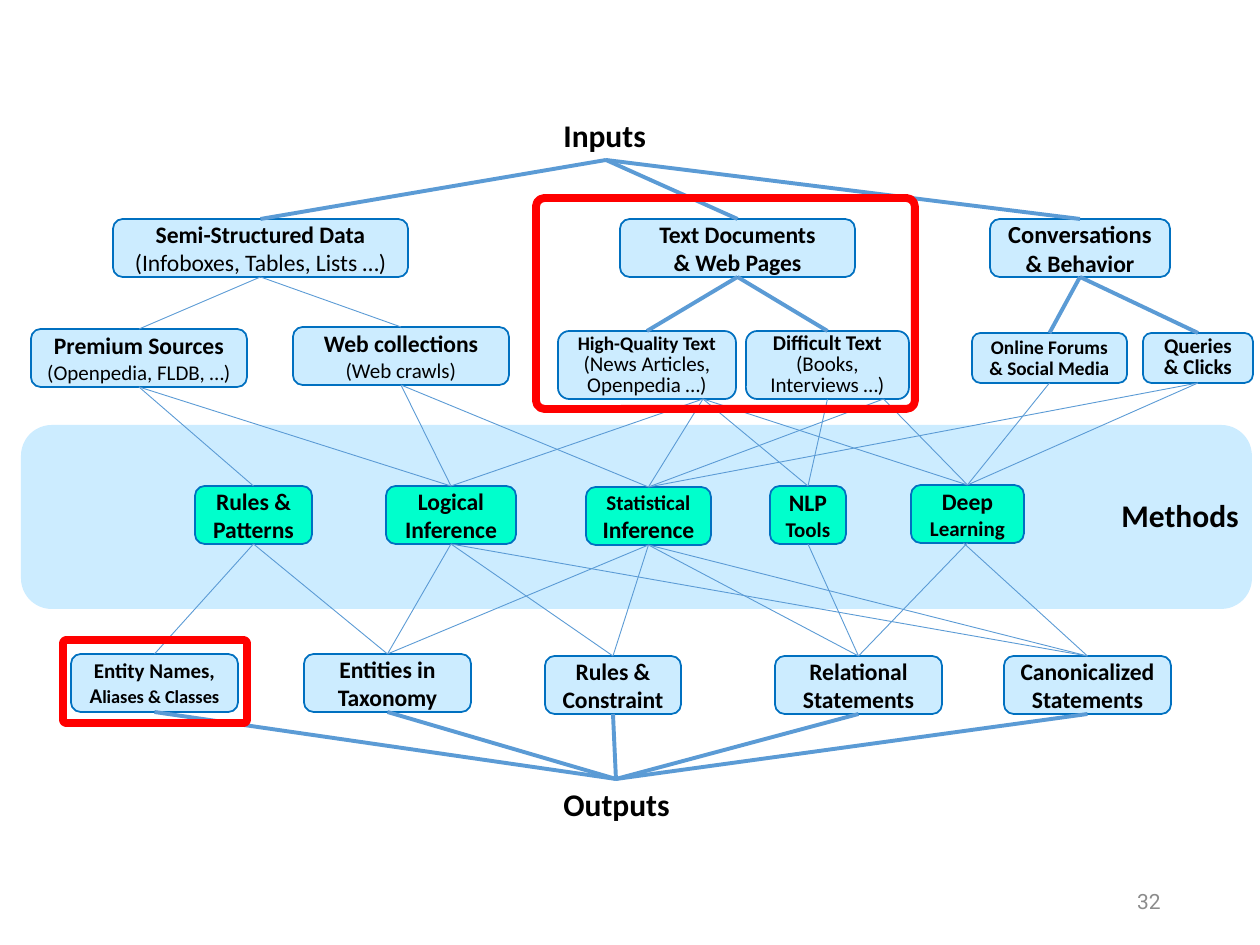
"""Build a slide that maps knowledge-harvesting inputs through methods to outputs."""
import pptx
import pptx.dml.color
import pptx.enum.shapes
import pptx.enum.text
import pptx.oxml.ns
import pptx.util
from lxml import etree

RGB = pptx.dml.color.RGBColor
SHAPE = pptx.enum.shapes.MSO_SHAPE
ALIGN = pptx.enum.text.PP_ALIGN
ANCHOR = pptx.enum.text.MSO_ANCHOR

PALE_BLUE = RGB(0xCC, 0xEC, 0xFF)
MINT = RGB(0x00, 0xFF, 0xCC)
OUTLINE = RGB(0x00, 0x70, 0xC0)
LINK_BLUE = RGB(0x5B, 0x9B, 0xD5)
RED = RGB(0xFF, 0x00, 0x00)
BLACK = RGB(0x00, 0x00, 0x00)
GRAY = RGB(0x8C, 0x8C, 0x8C)
THICK, THIN = 2.25, 0.5
PX_PER_INCH = 126

BAND = (21, 425, 1231, 184)
FRAMES = [(536, 198, 379, 211), (63, 640, 184, 83)]
LABELS = {
    "Inputs": (551, 110, 110, 50),
    "Outputs": (551, 779, 130, 50),
    "Methods": (1109, 490, 143, 50),
}
PAGE_NUMBER = ("32", (890, 876, 283, 50))

# Each tier: fill, box height, line spacing in points, then
# name: (left, top, width, paragraphs of (text, size, bold) runs).
TIERS = [
    (PALE_BLUE, 58, None, {
        "semi-structured": (113, 219, 295, [
            [("Semi-Structured Data", 13.5, True)],
            [("(Infoboxes, Tables, Lists …)", 13.5, False)]]),
        "documents": (620, 219, 235, [
            [("Text Documents", 13.5, True)], [("& Web Pages", 13.5, True)]]),
        "conversations": (990, 219, 180, [
            [("Conversations", 14, True)], [("& Behavior", 13.5, True)]]),
        "premium": (31, 329, 216, [
            [("Premium Sources", 13.5, True)],
            [("(Openpedia, FLDB, …)", 12, False)]]),
        "web": (293, 327, 216, [
            [("Web collections", 13.5, True)], [("(Web crawls)", 12, False)]]),
    }),
    (PALE_BLUE, 68, 12, {
        "quality": (558, 331, 178, [
            [("High-Quality Text", 11, True)],
            [("(News Articles, Openpedia …)", 12, False)]]),
        "difficult": (746, 331, 163, [
            [("Difficult Text", 12, True)],
            [("(Books,", 12, False)], [("Interviews …)", 12, False)]]),
    }),
    (PALE_BLUE, 50, 12, {
        "forums": (972, 333, 155, [
            [("Online Forums", 11, True)], [("& Social Media", 11, True)]]),
        "queries": (1143, 333, 110, [[("Queries & Clicks", 12, True)]]),
    }),
    (MINT, 58, None, {
        "rules": (195, 486, 117, [[("Rules & Patterns", 13.5, True)]]),
        "logical": (386, 486, 130, [
            [("Logical", 13.5, True)], [("Inference", 13.5, True)]]),
        "statistical": (586, 487, 125, [
            [("Statistical", 12, True)], [("Inference", 13.5, True)]]),
        "nlp": (770, 486, 76, [[("NLP", 13.5, True)], [("Tools", 12, True)]]),
        "deep": (911, 485, 113, [
            [("Deep", 13.5, True)], [("Learning", 12, True)]]),
    }),
    (PALE_BLUE, 58, None, {
        "names": (71, 654, 167, [
            [("Entity Names, A", 12, True), ("liases & Classes", 10.5, True)]]),
        "taxonomy": (304, 654, 167, [
            [("Entities in", 13.5, True)], [("Taxonomy", 13.5, True)]]),
        "constraint": (545, 656, 136, [
            [("Rules &", 13.5, True)], [("Constraint", 13.5, True)]]),
        "relational": (775, 656, 167, [
            [("Relational", 13.5, True)], [("Statements", 13.5, True)]]),
        "canonical": (1004, 656, 167, [
            [("Canonicalized", 13.5, True)], [("Statements", 13.5, True)]]),
    }),
]

LINKS = [
    ("Inputs", 0, ["semi-structured", "documents", "conversations"], THICK),
    ("documents", 0, ["quality", "difficult"], THICK),
    ("conversations", 0, ["forums", "queries"], THICK),
    ("semi-structured", 0, ["premium", "web"], THIN),
    ("premium", 0, ["rules", "logical"], THIN),
    ("web", 0, ["logical", "statistical"], THIN),
    ("quality", 56, ["logical", "statistical", "nlp", "deep"], THIN),
    ("difficult", 0, ["nlp"], THIN),
    ("difficult", 56, ["statistical", "deep"], THIN),
    ("forums", 0, ["deep"], THIN),
    ("queries", 0, ["statistical", "deep"], THIN),
    ("rules", 0, ["names", "taxonomy"], THIN),
    ("logical", 0, ["taxonomy", "constraint", "canonical"], THIN),
    ("statistical", 0, ["taxonomy", "constraint", "relational", "canonical"], THIN),
    ("nlp", 0, ["relational"], THIN),
    ("deep", 0, ["relational"], THIN),
    ("deep", -4, ["canonical"], THIN),
    *[(output, 0, ["Outputs"], THICK) for output in TIERS[-1][3]],
]


def px(*lengths):
    return [pptx.util.Emu(round(length * 914400 / PX_PER_INCH)) for length in lengths]


def add_run(paragraph, text, size, bold, color=BLACK, font="Calibri"):
    run = paragraph.add_run()
    run.text = text
    run.font.name = font
    run.font.size = pptx.util.Pt(size)
    run.font.bold = bold
    run.font.color.rgb = color


def add_rounded(slide, area, fill=None, line=None, weight=1):
    rounded = slide.shapes.add_shape(SHAPE.ROUNDED_RECTANGLE, *px(*area))
    rounded.shadow.inherit = False
    if fill is None:
        rounded.fill.background()
    else:
        rounded.fill.solid()
        rounded.fill.fore_color.rgb = fill
    if line is None:
        rounded.line.fill.background()
    else:
        rounded.line.color.rgb = line
        rounded.line.width = pptx.util.Pt(weight)
    return rounded


def add_box(slide, area, fill, spacing, paragraphs):
    frame = add_rounded(slide, area, fill, OUTLINE).text_frame
    frame.word_wrap = True
    frame.vertical_anchor = ANCHOR.MIDDLE
    for index, runs in enumerate(paragraphs):
        paragraph = frame.add_paragraph() if index else frame.paragraphs[0]
        paragraph.alignment = ALIGN.CENTER
        if spacing:
            paragraph.line_spacing = pptx.util.Pt(spacing)
        for run in runs:
            add_run(paragraph, *run)


def add_link(slide, source, shift, target, weight):
    left, top, width, height = source
    start = px(left + width / 2 + shift, top + height)
    end = px(target[0] + target[2] / 2, target[1])
    link = slide.shapes.add_connector(
        pptx.enum.shapes.MSO_CONNECTOR.STRAIGHT, *start, *end)
    link.line.color.rgb = LINK_BLUE
    link.line.width = pptx.util.Pt(weight)
    etree.SubElement(link._element.spPr, pptx.oxml.ns.qn("a:effectLst"))


def main():
    deck = pptx.Presentation()
    deck.slide_width, deck.slide_height = px(1260, 945)
    slide = deck.slides.add_slide(deck.slide_layouts[6])

    add_rounded(slide, BAND, PALE_BLUE)
    areas = dict(LABELS)
    for fill, height, spacing, boxes in TIERS:
        for name, (left, top, width, paragraphs) in boxes.items():
            areas[name] = (left, top, width, height)
            add_box(slide, areas[name], fill, spacing, paragraphs)

    for source, shift, targets, weight in LINKS:
        for target in targets:
            add_link(slide, areas[source], shift, areas[target], weight)

    for label, area in LABELS.items():
        frame = slide.shapes.add_textbox(*px(*area)).text_frame
        frame.word_wrap = False
        frame.margin_right = 0
        add_run(frame.paragraphs[0], label, 18, True)

    number, area = PAGE_NUMBER
    frame = slide.shapes.add_textbox(*px(*area)).text_frame
    frame.word_wrap = True
    frame.vertical_anchor = ANCHOR.MIDDLE
    frame.paragraphs[0].alignment = ALIGN.RIGHT
    add_run(frame.paragraphs[0], number, 12, False, GRAY, "Roboto")

    for area in FRAMES:
        add_rounded(slide, area, line=RED, weight=4.5).adjustments[0] = 0.04

    deck.save("out.pptx")


if __name__ == "__main__":
    main()
